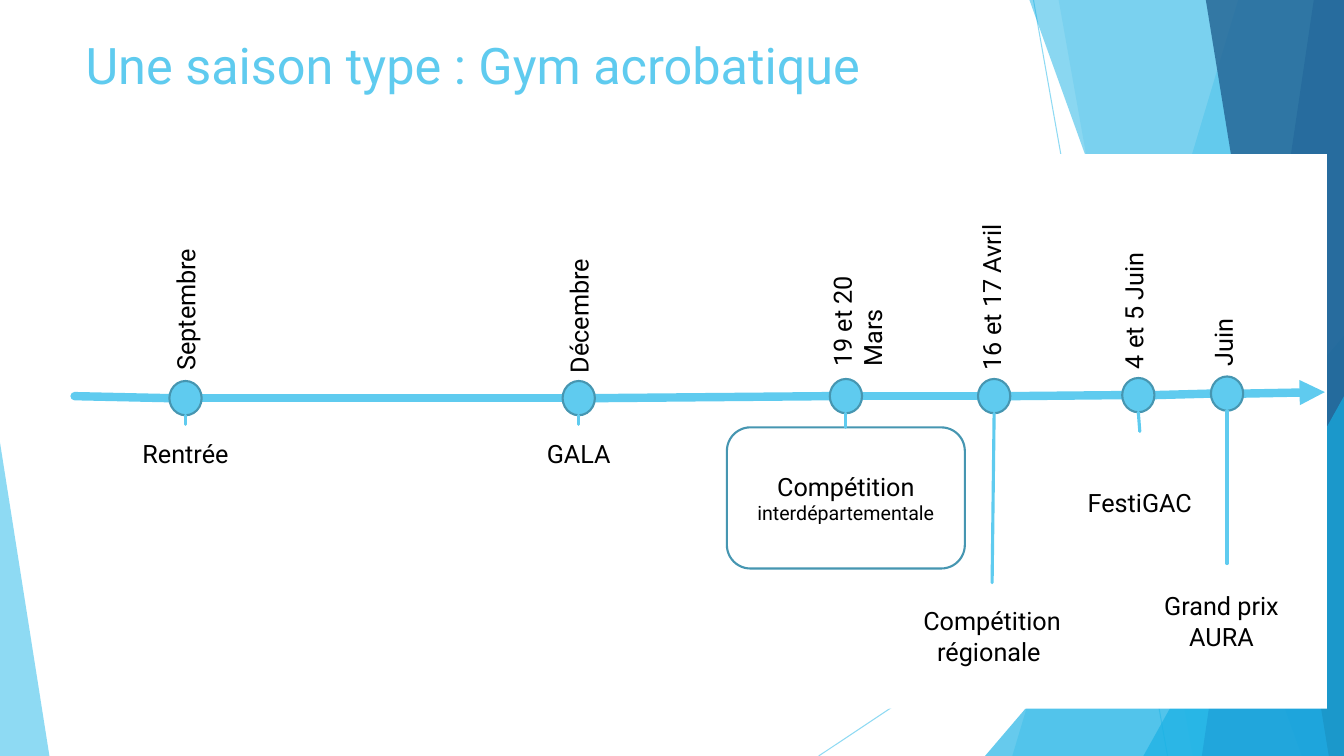
from dataclasses import dataclass

from lxml.etree import SubElement
from pptx import Presentation
from pptx.dml.color import RGBColor
from pptx.enum.shapes import MSO_CONNECTOR, MSO_SHAPE
from pptx.enum.text import MSO_ANCHOR, PP_ALIGN
from pptx.oxml.ns import qn
from pptx.util import Inches, Pt

COLORS = {
    "sky": "5FCBEF", "azure": "17B0E4", "blue": "2E83C3", "navy": "226292",
    "outline": "4696B1", "white": "FFFFFF", "text": "000000",
}
FONT = "Roboto"
CELLS_PER_INCH = 10
DOT_WIDTH, DOT_HEIGHT, DATE_HEIGHT = 3.2, 3.4, 4


@dataclass
class Box:
    """A region measured in columns and rows of a tenth of an inch."""
    left: float
    top: float
    width: float
    height: float

    def at(self, column, row):
        """Return the slide position of a point of this region."""
        return size(self.left + column), size(self.top + row)


@dataclass
class Milestone:
    """One dot of the timeline with its date and its event."""
    column: float
    row: float
    date: str
    date_column: float
    date_bottom: float
    date_length: float
    event: list
    event_box: Box
    framed: bool = False
    stem_end: tuple = None


MILESTONES = [
    Milestone(14.1, 24.2, "Septembre", 14.1, 22.45, 15,
              [("Rentrée", 18)], Box(5.5, 26.8, 17.2, 5.8)),
    Milestone(53.1, 24.2, "Décembre", 53.1, 22.7, 15,
              [("GALA", 18)], Box(44.5, 26.8, 17.2, 5.8)),
    Milestone(79.6, 24, "19 et 20\vMars", 79.2, 22.05, 17,
              [("Compétition ", 18), ("interdépartementale", 14)],
              Box(67.8, 27.1, 23.6, 14), framed=True),
    Milestone(94.3, 24, "16 et 17 Avril", 94, 22.4, 18,
              [("Compétition régionale ", 18)], Box(82.3, 42.5, 23.6, 10.6)),
    Milestone(108.6, 23.9, "4 et 5 Juin", 108.1, 22.3, 15,
              [("FestiGAC", 18)], Box(98.5, 27.5, 20.5, 14)),
    Milestone(117.4, 23.75, "Juin", 117, 22.05, 9,
              [("Grand prix AURA", 18)], Box(106.6, 39.3, 20.5, 14),
              stem_end=(117.4, 40.6)),
]


def size(cells):
    """Convert grid cells to a slide length."""
    return Inches(cells / CELLS_PER_INCH)


def set_alpha(color_format, percent):
    """Make a solid fill partly transparent."""
    color = color_format._xPr.find(qn("a:solidFill"))[0]
    SubElement(color, qn("a:alpha")).set("val", str(percent * 1000))


def paint(shape, fill=None, outline=None, alpha=100):
    """Set the fill and outline of a shape and drop its shadow."""
    shape.shadow.inherit = False
    if fill:
        shape.fill.solid()
        shape.fill.fore_color.rgb = RGBColor.from_string(COLORS[fill])
        if alpha < 100:
            set_alpha(shape.fill, alpha)
    else:
        shape.fill.background()
    if outline:
        shape.line.color.rgb = RGBColor.from_string(COLORS[outline])
        shape.line.width = Pt(1.5)
    else:
        shape.line.fill.background()


def style_font(font, points, color):
    """Apply the deck's typeface, a size and a colour."""
    font.name, font.size = FONT, Pt(points)
    font.color.rgb = RGBColor.from_string(COLORS[color])


def add_line(slide, start, end, points, alpha=100, arrow=False, cap="flat"):
    """Draw a straight sky-blue line."""
    line = slide.shapes.add_connector(MSO_CONNECTOR.STRAIGHT, *start, *end)
    line.line.color.rgb = RGBColor.from_string(COLORS["sky"])
    line.line.width = Pt(points)
    if alpha < 100:
        set_alpha(line.line.fill, alpha)
    outline = line.line._get_or_add_ln()
    outline.set("cap", cap)
    if arrow:
        SubElement(outline, qn("a:tailEnd")).set("type", "triangle")
    SubElement(line._element.spPr, qn("a:effectLst"))
    return line


def add_band(slide, box, top_column, bottom_column, fill, alpha):
    """Fill the region to the right of a slanted edge."""
    builder = slide.shapes.build_freeform(*box.at(top_column, 0), scale=1.0)
    builder.add_line_segments([
        box.at(box.width, 0), box.at(box.width, box.height),
        box.at(bottom_column, box.height)])
    paint(builder.convert_to_shape(), fill, alpha=alpha)


def add_wedge(slide, box, column, row, width, apex, fill, alpha):
    """Draw a right triangle standing on the bottom of the region."""
    wedge = slide.shapes.add_shape(
        MSO_SHAPE.ISOSCELES_TRIANGLE, *box.at(column, row),
        size(width), size(box.height - row))
    wedge.adjustments[0] = apex
    paint(wedge, fill, alpha=alpha)


def add_backdrop(slide, box):
    """Place the translucent facets along the sides of the region."""
    add_line(slide, box.at(102.5, 0), box.at(115.8, box.height), 0.75, 70)
    add_line(slide, box.at(box.width, 40.3), box.at(81.2, box.height), 0.75, 70)
    add_band(slide, box, 122.8, 100.4, "sky", 36)
    add_band(slide, box, 105, 118.3, "sky", 20)
    add_wedge(slide, box, 97.7, 33.3, 35.6, 1, "azure", 66)
    add_band(slide, box, 102.1, 129.1, "azure", 50)
    add_band(slide, box, 130.3, 119.2, "blue", 70)
    add_band(slide, box, 119.6, 131.8, "navy", 80)
    add_wedge(slide, box, 113.4, 39.3, 19.9, 1, "azure", 66)
    add_wedge(slide, box, 0, 43.9, 4.9, 0, "sky", 70)


def add_title(slide, box, title):
    """Write the slide title at the top of the region."""
    heading = slide.shapes.add_textbox(
        *box.at(0, 0), size(box.width), size(box.height))
    heading.text_frame.word_wrap = True
    heading.text_frame.text = title
    style_font(heading.text_frame.paragraphs[0].font, 36, "sky")


def add_milestone(slide, box, milestone):
    """Draw a dot, its upright date, its event and the stem between them."""
    dot = slide.shapes.add_shape(
        MSO_SHAPE.OVAL,
        *box.at(milestone.column - DOT_WIDTH / 2, milestone.row - DOT_HEIGHT / 2),
        size(DOT_WIDTH), size(DOT_HEIGHT))
    paint(dot, "sky", "outline")

    length = milestone.date_length
    date_row = milestone.date_bottom - length / 2
    date = slide.shapes.add_textbox(
        *box.at(milestone.date_column - length / 2, date_row - DATE_HEIGHT / 2),
        size(length), size(DATE_HEIGHT))
    date.rotation = 270
    date.text_frame.word_wrap = True
    date.text_frame.text = milestone.date
    style_font(date.text_frame.paragraphs[0].font, 18, "text")

    place = milestone.event_box
    event = slide.shapes.add_shape(
        MSO_SHAPE.ROUNDED_RECTANGLE, *box.at(place.left, place.top),
        size(place.width), size(place.height))
    paint(event, outline="outline" if milestone.framed else None)
    event.text_frame.word_wrap = True
    event.text_frame.vertical_anchor = MSO_ANCHOR.MIDDLE
    caption = event.text_frame.paragraphs[0]
    caption.alignment = PP_ALIGN.CENTER
    for words, points in milestone.event:
        run = caption.add_run()
        run.text = words
        style_font(run.font, points, "text")

    stem_end = milestone.stem_end or (place.left + place.width / 2, place.top)
    stem = add_line(
        slide, box.at(milestone.column, milestone.row + DOT_HEIGHT / 2),
        box.at(*stem_end), 2.25, cap="rnd")
    if not milestone.stem_end:
        stem.end_connect(event, 0)


def add_timeline(slide, box, milestones):
    """Draw the white panel, the axis from dot to dot and every milestone."""
    panel = slide.shapes.add_shape(
        MSO_SHAPE.RECTANGLE, *box.at(0, 0), size(box.width), size(box.height))
    paint(panel, "white")
    start, edge = box.at(3.1, 24), DOT_WIDTH / 2
    for milestone in milestones:
        add_line(slide, start, box.at(milestone.column - edge, milestone.row),
                 6, cap="rnd")
        start = box.at(milestone.column + edge, milestone.row)
    add_line(slide, start, box.at(127.1, 23.6), 6, arrow=True, cap="rnd")
    for milestone in milestones:
        add_milestone(slide, box, milestone)


def main():
    """Build the season slide and save it."""
    deck = Presentation()
    deck.slide_width, deck.slide_height = Inches(13.33), Inches(7.5)
    slide = deck.slides.add_slide(deck.slide_layouts[6])
    add_backdrop(slide, Box(0, 0, 133.3, 75))
    add_timeline(slide, Box(4.3, 15.3, 127.3, 55), MILESTONES)
    add_title(slide, Box(7.5, 2.9, 99.8, 14.4), "Une saison type : Gym acrobatique")
    deck.save("out.pptx")


if __name__ == "__main__":
    main()
